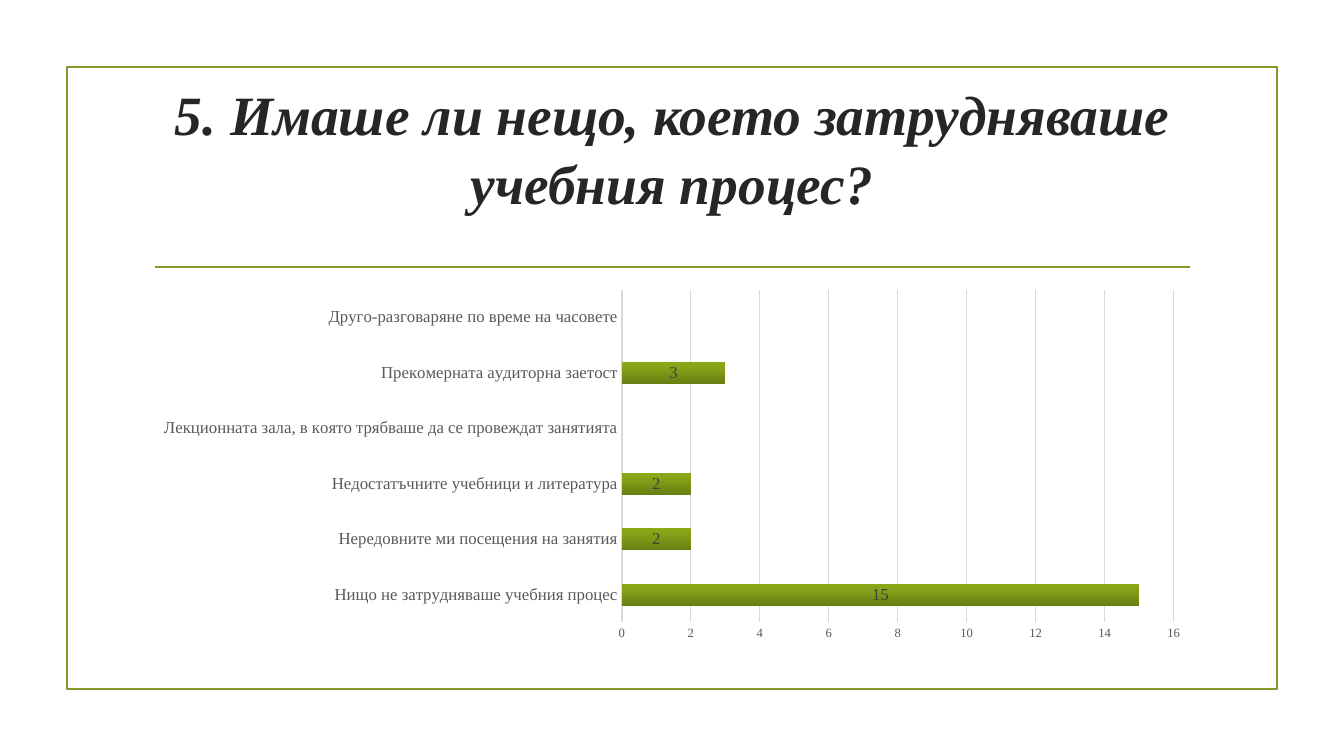
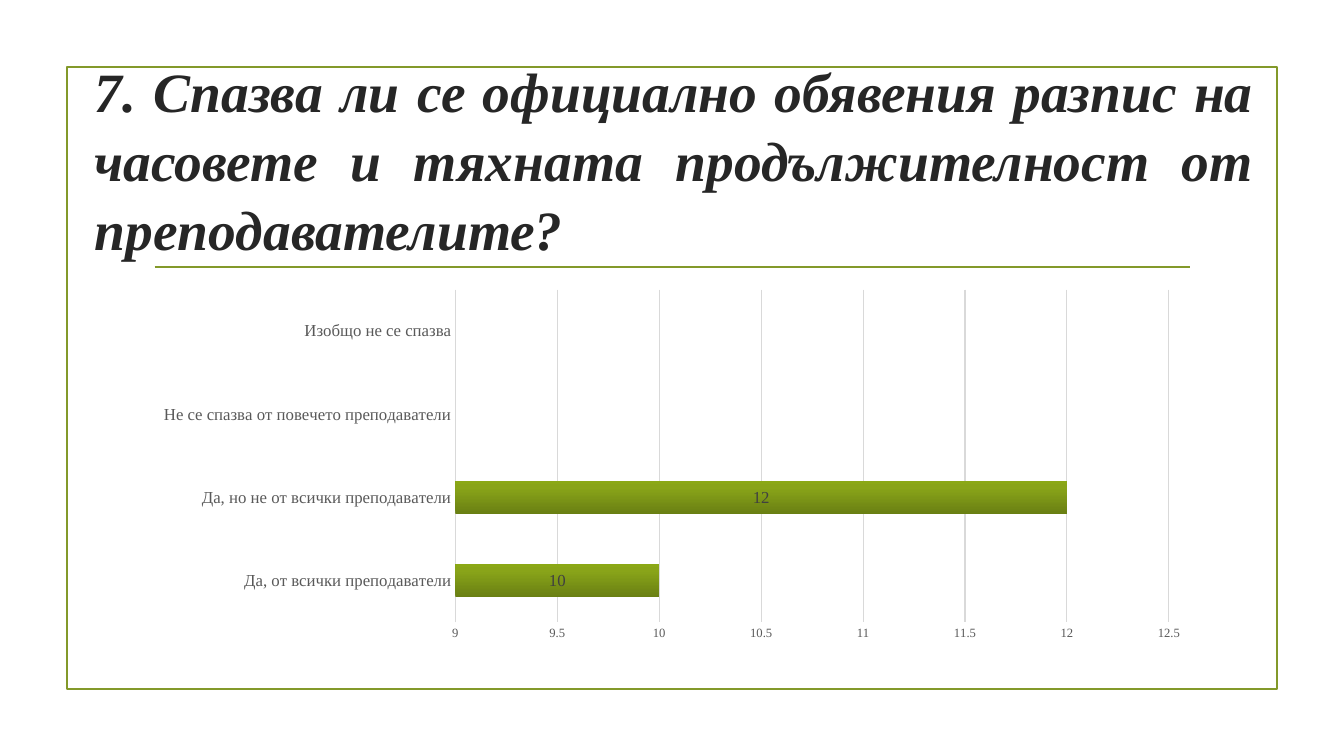
from copy import deepcopy

from lxml import etree
from pptx import Presentation
from pptx.chart.data import CategoryChartData
from pptx.dml.color import RGBColor
from pptx.enum.chart import XL_CHART_TYPE, XL_LABEL_POSITION, XL_TICK_MARK
from pptx.enum.shapes import MSO_CONNECTOR, MSO_SHAPE
from pptx.enum.text import MSO_ANCHOR, MSO_AUTO_SIZE, PP_ALIGN
from pptx.oxml.ns import qn
from pptx.util import Inches, Pt

BAR_STACKED = XL_CHART_TYPE.BAR_STACKED
LABEL_CENTER = XL_LABEL_POSITION.CENTER
NO_TICK = XL_TICK_MARK.NONE
STRAIGHT = MSO_CONNECTOR.STRAIGHT
RECTANGLE = MSO_SHAPE.RECTANGLE
MIDDLE = MSO_ANCHOR.MIDDLE
NO_AUTOFIT = MSO_AUTO_SIZE.NONE
CENTER, JUSTIFY = PP_ALIGN.CENTER, PP_ALIGN.JUSTIFY

BLACK = RGBColor(0x00, 0x00, 0x00)
INK = RGBColor(0x26, 0x26, 0x26)
LABEL_GRAY = RGBColor(0x40, 0x40, 0x40)
AXIS_GRAY = RGBColor(0x59, 0x59, 0x59)
GRID_GRAY = RGBColor(0xD9, 0xD9, 0xD9)
OLIVE = RGBColor(0x83, 0x99, 0x2A)
BAR_STOPS = (
    (0, RGBColor(0x69, 0x7F, 0x13)),
    (0.8, RGBColor(0x89, 0xA4, 0x19)),
    (1, RGBColor(0x8B, 0xA8, 0x16)),
)

FONT = "Times New Roman"
TITLE_SIZE = 39.6
COLUMNS, ROWS = 160, 90
TITLE_ONLY = 5

SURVEY = (
    {
        "title": "5. Имаше ли нещо, което затрудняваше учебния процес?",
        "title_area": (17, 12.8, 126, 17.2),
        "alignment": CENTER,
        "answers": {
            "Нищо не затрудняваше учебния процес": 15,
            "Нередовните ми посещения на занятия": 2,
            "Недостатъчните учебници и литература": 2,
            "Лекционната зала, в която трябваше да се провеждат занятията": None,
            "Прекомерната аудиторна заетост": 3,
            "Друго-разговаряне по време на часовете": None,
        },
        "scale": (0, 16, 2),
    },
    {
        "title": "7. Спазва ли се официално обявения разпис на часовете "
                 "и тяхната продължителност от преподавателите?",
        "title_area": (10.1, 11.9, 140.3, 21.7),
        "alignment": JUSTIFY,
        "answers": {
            "Да, от всички преподаватели": 10,
            "Да, но не от всички преподаватели": 12,
            "Не се спазва от повечето преподаватели": None,
            "Изобщо не се спазва": None,
        },
        "scale": (9, 12.5, 0.5),
    },
)


def style_font(font, size, color):
    font.name = FONT
    font.size = Pt(size)
    font.color.rgb = color


def style_line(line, color, width):
    line.color.rgb = color
    line.width = Pt(width)


class SurveyDeck:
    def __init__(self):
        self.deck = Presentation()
        self.deck.slide_width = Inches(13.33)
        self.deck.slide_height = Inches(7.5)
        self.page = None

    def grid(self, column, row, *size):
        """Turn grid columns and rows, in turn, into lengths."""
        units = (self.deck.slide_width / COLUMNS, self.deck.slide_height / ROWS)
        return [round(cells * units[index % 2])
                for index, cells in enumerate((column, row, *size))]

    def add_page(self):
        self.page = self.deck.slides.add_slide(self.deck.slide_layouts[TITLE_ONLY])
        self.add_frame()
        self.add_rule()

    def add_frame(self):
        frame = self.page.shapes.add_shape(RECTANGLE, *self.grid(8, 8, 144, 74))
        frame.shadow.inherit = False
        frame.fill.background()
        style_line(frame.line, OLIVE, 1.25)

    def add_rule(self):
        rule = self.page.shapes.add_connector(
            STRAIGHT, *self.grid(18.4, 31.8, 141.7, 31.8))
        style_line(rule.line, OLIVE, 1.25)
        properties = rule.element.find(qn("p:spPr"))
        etree.SubElement(properties, qn("a:effectLst"))

    def add_title(self, text, area, alignment):
        """Fill the title, lifted half a line above the middle of its area."""
        title = self.page.shapes.title
        title.left, title.top, title.width, title.height = self.grid(*area)
        frame = title.text_frame
        frame.text = text
        frame.word_wrap = True
        frame.auto_size = NO_AUTOFIT
        frame.vertical_anchor = MIDDLE
        frame.margin_bottom = Inches(0.71)
        paragraph = frame.paragraphs[0]
        paragraph.alignment = alignment
        paragraph.line_spacing = 1.04
        style_font(paragraph.font, TITLE_SIZE, INK)
        paragraph.font.bold = paragraph.font.italic = True

    def add_bars(self, answers, scale):
        data = CategoryChartData()
        data.categories = answers.keys()
        data.add_series("Series 1", answers.values())
        area = self.grid(17, 33.6, 126, 43.6)
        chart = self.page.shapes.add_chart(BAR_STACKED, *area, data).chart
        chart.has_title = chart.has_legend = False
        style_font(chart.font, 10, BLACK)

        plot = chart.plots[0]
        plot.vary_by_categories = False
        plot.gap_width, plot.overlap = 150, 100
        plot.has_data_labels = True
        labels = plot.data_labels
        labels.show_value = True
        labels.position = LABEL_CENTER
        style_font(labels.font, 12, LABEL_GRAY)

        self.style_axes(chart, scale)
        self.shade_bars(chart)

    def style_axes(self, chart, scale):
        categories, values = chart.category_axis, chart.value_axis
        for axis, size in ((categories, 12), (values, 9)):
            axis.major_tick_mark = axis.minor_tick_mark = NO_TICK
            style_font(axis.tick_labels.font, size, AXIS_GRAY)
        categories.has_major_gridlines = False
        style_line(categories.format.line, GRID_GRAY, 1)
        values.format.line.fill.background()
        values.has_major_gridlines = True
        style_line(values.major_gridlines.format.line, GRID_GRAY, 0.75)
        values.minimum_scale, values.maximum_scale, values.major_unit = scale

    def shade_bars(self, chart):
        fill = chart.plots[0].series[0].format.fill
        fill.gradient()
        fill.gradient_angle = 90
        stop_list = next(chart.element.iter(qn("a:gsLst")))
        stop_list.append(deepcopy(stop_list[-1]))
        for stop, (position, color) in zip(fill.gradient_stops, BAR_STOPS):
            stop.position = position
            stop.color.rgb = color


def main():
    survey = SurveyDeck()
    for question in SURVEY:
        survey.add_page()
        survey.add_title(
            question["title"], question["title_area"], question["alignment"])
        survey.add_bars(question["answers"], question["scale"])
    survey.deck.save("out.pptx")


if __name__ == "__main__":
    main()
